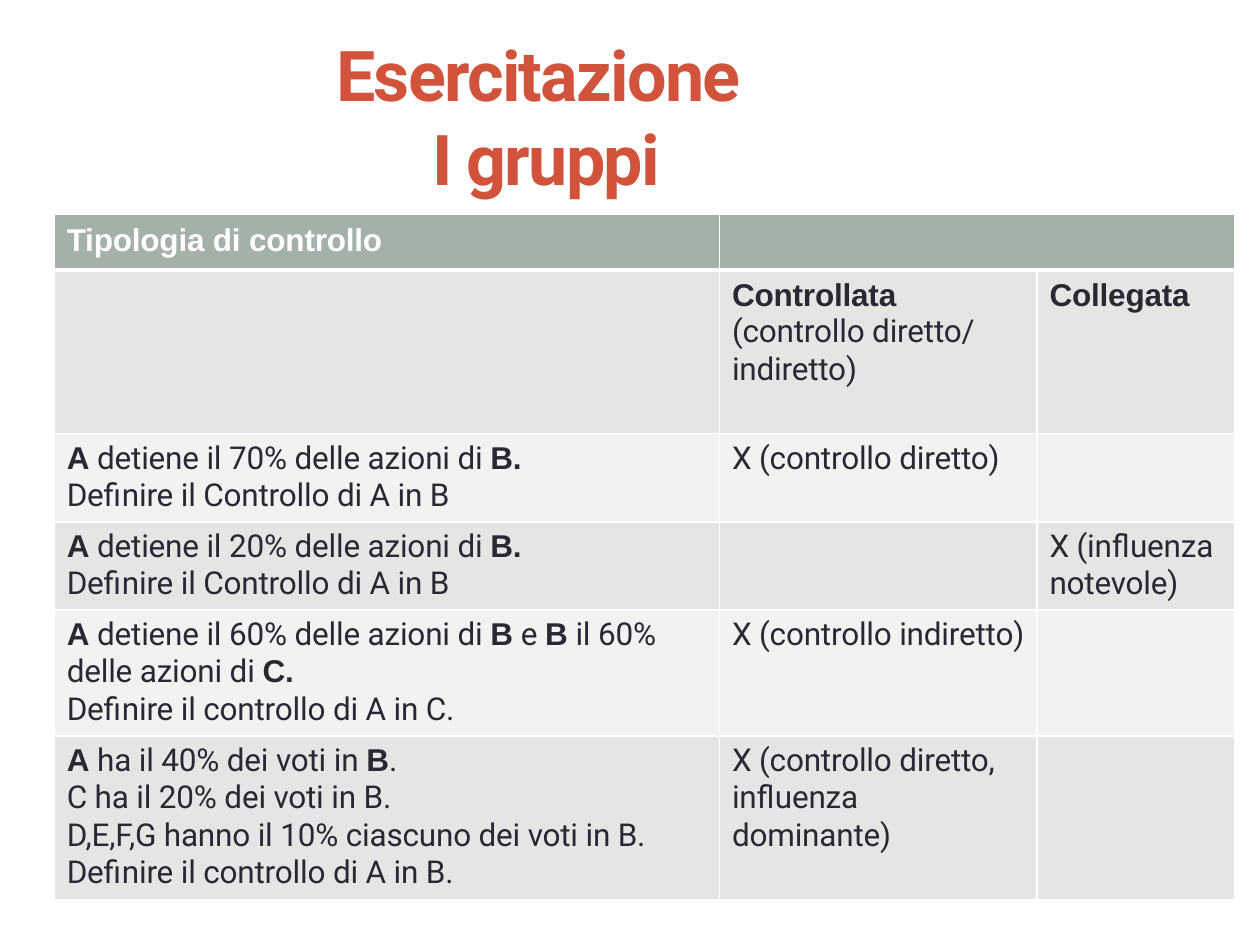
from dataclasses import dataclass

from lxml import etree
from pptx import Presentation
from pptx.dml.color import RGBColor
from pptx.enum.text import MSO_ANCHOR, PP_ALIGN
from pptx.oxml.ns import qn
from pptx.util import Inches, Pt

MIDDLE = MSO_ANCHOR.MIDDLE
CENTER = PP_ALIGN.CENTER
SLIDE_WIDTH, SLIDE_HEIGHT = 10, 7.5


@dataclass(frozen=True)
class Theme:
    title_color: str = "D2533C"
    header_fill: str = "A4B1A9"
    header_color: str = "FFFFFF"
    band_fills: tuple = ("F1F3F2", "E3E6E4")
    body_color: str = "292934"
    border_color: str = "FFFFFF"
    body_font: str = "Roboto"
    strong_font: str = "Arial"
    title_size: int = 40
    body_size: int = 18
    line_pitch: float = 21.3
    thin_border: int = 1
    thick_border: int = 3


THEME = Theme()

# Boxes: left, top, width, height as shares of the slide
TITLE_BOX = (0.052, 0.031, 0.763, 0.181)
TABLE_BOX = (0.043, 0.227, 0.937, 0.725)

# Table grid, as relative weights
COLUMNS = (5.28, 2.52, 1.57)
ROWS = (0.44, 1.3, 0.7, 0.7, 1, 1.3)

# Cell wording: *bold*, a list entry per paragraph, \v for a line break
QUESTION = "Definire il Controllo di A in B"
CELLS = (
    (["*Tipologia di controllo*"], [], []),
    ([], ["*Controllata*\v(controllo diretto/\vindiretto)"], ["*Collegata*"]),
    (["*A* detiene il 70% delle azioni di *B.*", QUESTION],
     ["X (controllo diretto)"], []),
    (["*A* detiene il 20% delle azioni di *B.*", QUESTION],
     [], ["X (influenza\vnotevole)"]),
    (["*A* detiene il 60% delle azioni di *B* e *B* il 60%\vdelle azioni di *C.*",
      "Definire il controllo di A in C."],
     ["X (controllo indiretto)"], []),
    (["*A* ha il 40% dei voti in *B*.\vC ha il 20% dei voti in B.",
      "D,E,F,G hanno il 10% ciascuno dei voti in B.\vDefinire il controllo di A in B."],
     ["X (controllo diretto,\vinfluenza\vdominante)"], []),
)


def apply_format(target, values):
    for name, value in values.items():
        setattr(target, name, value)


def to_lengths(box):
    left, top, width, height = box
    return (Inches(left * SLIDE_WIDTH), Inches(top * SLIDE_HEIGHT),
            Inches(width * SLIDE_WIDTH), Inches(height * SLIDE_HEIGHT))


def add_span(para, text, color, spacing, values):
    span = para.add_run()
    span.text = text
    apply_format(span.font, values)
    span.font.color.rgb = RGBColor.from_string(color)
    span.font._element.set("spc", str(round(spacing * 100)))


def add_marked_text(para, text, color):
    """Write text whose *marked* parts are bold, breaking lines at \\v."""
    for index, part in enumerate(text.split("*")):
        strong = index % 2 == 1
        values = {
            "name": THEME.strong_font if strong else THEME.body_font,
            "size": Pt(THEME.body_size),
            "bold": strong,
        }
        for line_number, line in enumerate(part.split("\v")):
            if line_number:
                para.add_line_break()
            if line:
                add_span(para, line, color, -0.1, values)


def set_borders(cell, widths):
    properties = cell._tc.get_or_add_tcPr()
    for index, (side, width) in enumerate(widths.items()):
        border = etree.Element(qn(f"a:ln{side}"), w=str(Pt(width)))
        fill = etree.SubElement(border, qn("a:solidFill"))
        etree.SubElement(fill, qn("a:srgbClr"), val=THEME.border_color)
        properties.insert(index, border)


def build_title(page, box):
    frame = page.shapes.add_textbox(*to_lengths(box)).text_frame
    apply_format(frame, {
        "word_wrap": True, "vertical_anchor": MIDDLE, "margin_left": 0,
        "margin_right": 0, "margin_top": Inches(0.01), "margin_bottom": 0,
    })
    para = frame.paragraphs[0]
    para.alignment = CENTER
    values = {"name": THEME.body_font, "size": Pt(THEME.title_size), "bold": True}
    add_span(para, "Esercitazione ", THEME.title_color, -1, values)
    para.add_line_break()
    add_span(para, "I gruppi", THEME.title_color, -1, values)


def build_cell(cell, paragraphs, row):
    header = row == 0
    color = THEME.header_color if header else THEME.body_color
    fill = THEME.header_fill if header else THEME.band_fills[row % 2]
    cell.fill.solid()
    cell.fill.fore_color.rgb = RGBColor.from_string(fill)
    apply_format(cell, {
        "margin_left": Inches(0.1), "margin_right": 0,
        "margin_top": Inches(0.05), "margin_bottom": 0,
    })
    thin, thick = THEME.thin_border, THEME.thick_border
    set_borders(cell, {
        "L": thin, "R": thin,
        "T": thick if row == 1 else thin,
        "B": thick if header else thin,
    })
    for index, text in enumerate(paragraphs):
        frame = cell.text_frame
        para = frame.add_paragraph() if index else frame.paragraphs[0]
        para.line_spacing = Pt(THEME.line_pitch)
        add_marked_text(para, text, color)


def build_table(page, box):
    left, top, width, height = to_lengths(box)
    table = page.shapes.add_table(
        len(ROWS), len(COLUMNS), left, top, width, height).table
    for column, weight in zip(table.columns, COLUMNS):
        column.width = round(width * weight / sum(COLUMNS))
    for row, weight in zip(table.rows, ROWS):
        row.height = round(height * weight / sum(ROWS))
    for row, texts in enumerate(CELLS):
        for column, paragraphs in enumerate(texts):
            build_cell(table.cell(row, column), paragraphs, row)
    # The header spans both answer columns
    table.cell(0, 1).merge(table.cell(0, 2))


def main():
    deck = Presentation()
    deck.slide_width = Inches(SLIDE_WIDTH)
    deck.slide_height = Inches(SLIDE_HEIGHT)
    page = deck.slides.add_slide(deck.slide_layouts[6])
    build_title(page, TITLE_BOX)
    build_table(page, TABLE_BOX)
    deck.save("out.pptx")


if __name__ == "__main__":
    main()
